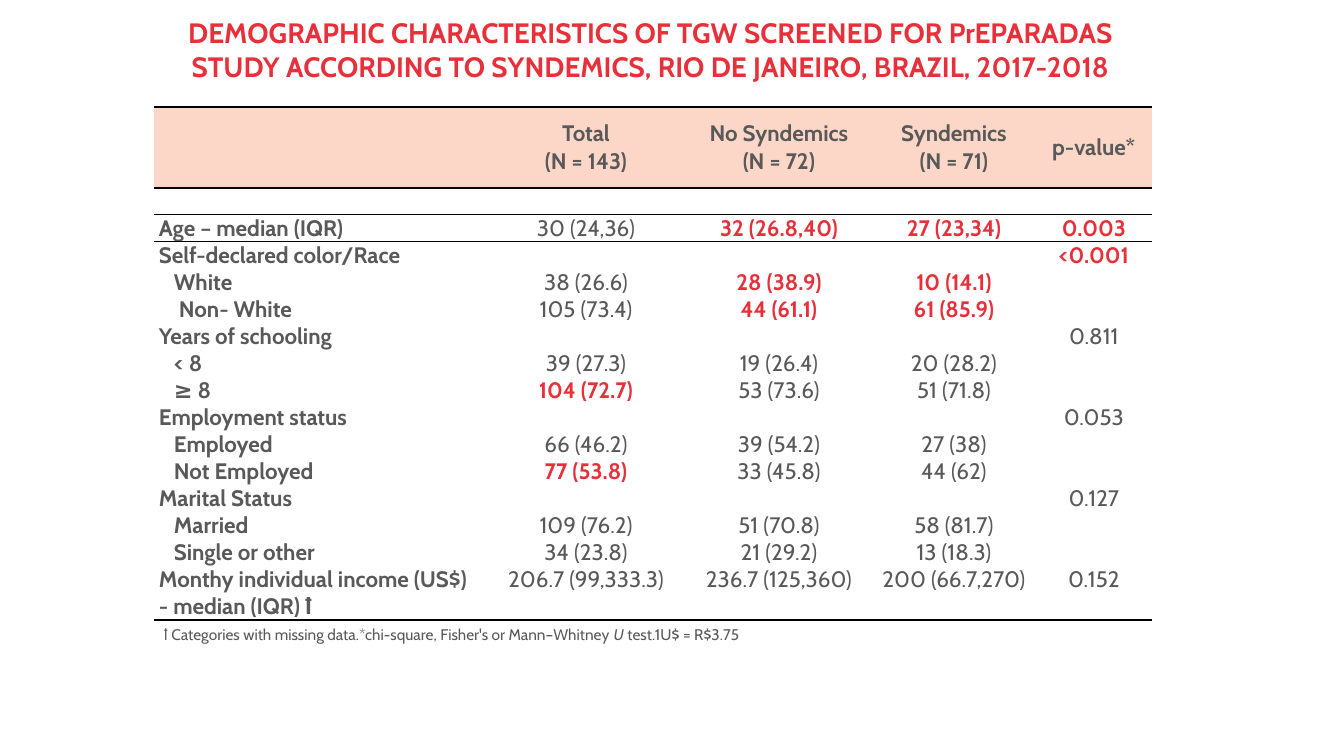
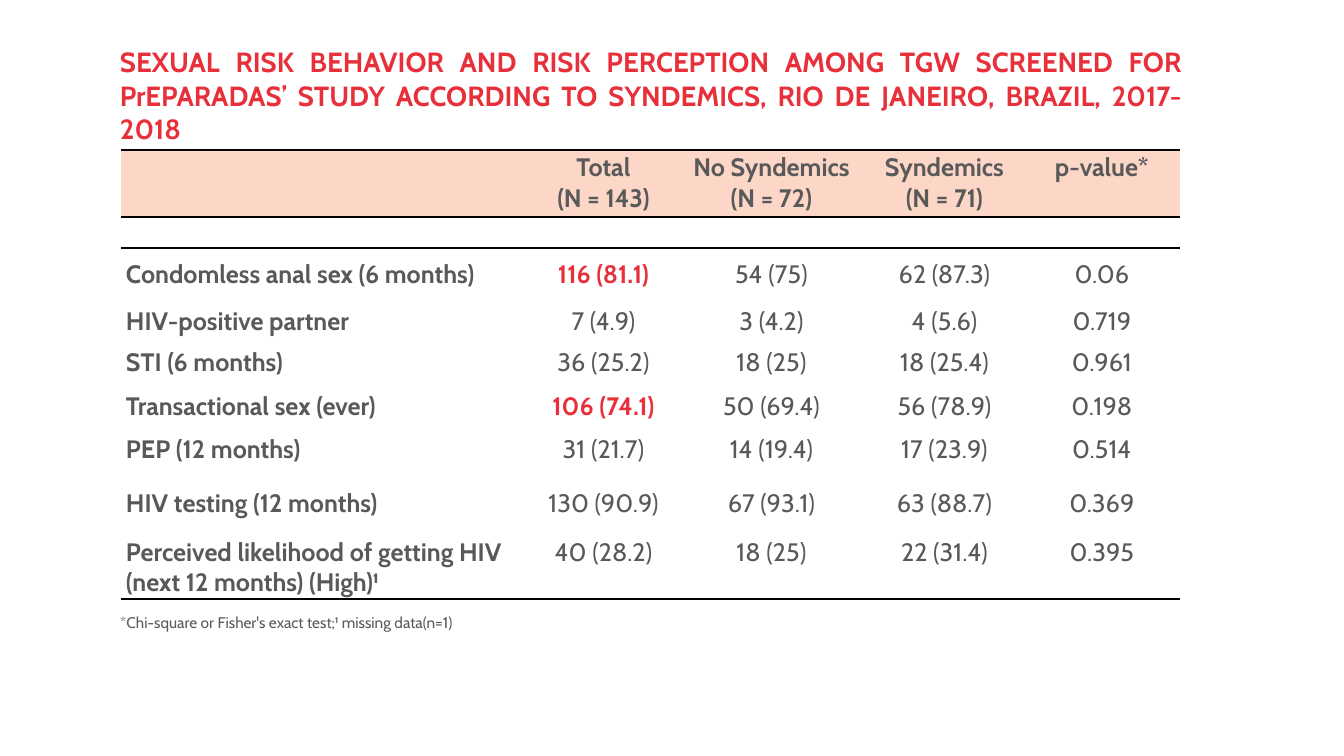
import lxml.etree
import pptx
import pptx.dml.color
import pptx.enum.text
import pptx.oxml.ns
import pptx.util

SCALE = 12192000 / 1344
FONT = "Cabin"
COLORS = {"red": "E8303B", "gray": "595959", "peach": "FCD7C8", "rule": "000000"}
ALIGN = pptx.enum.text.PP_ALIGN
ANCHOR = pptx.enum.text.MSO_ANCHOR
PLAIN_STYLE = "{2D5ABB26-0587-4C30-8999-92F81FD0307C}"
CELL_INSET = 5
NOTE_SIZE = 11

HEADER = ["", "Total\n(N = 143)", "No Syndemics\n(N = 72)", "Syndemics\n(N = 71)", "p-value*"]
SPACER = [""] * len(HEADER)

DEMOGRAPHICS = {
    "title": "DEMOGRAPHIC CHARACTERISTICS OF TGW SCREENED FOR PrEPARADAS STUDY "
             "ACCORDING TO SYNDEMICS, RIO DE JANEIRO, BRAZIL, 2017-2018",
    "title_at": (145, 11, 1011, 78),
    "title_style": (20, ALIGN.CENTER, ANCHOR.TOP),
    "table_at": (154, 107),
    "size": 16,
    "columns": [332, 200, 186, 164, 116],
    "heights": [81, 26] + [27] * 13 + [54],
    "header_anchor": ANCHOR.MIDDLE,
    "header_inset": 0,
    "middle_rows": 0,
    "rules": {0: 1, 1: 1, 2: 1, 16: 1.5},
    "rows": [
        ["Age – median (IQR)", "30 (24,36)", "32 (26.8,40)", "27 (23,34)", "0.003"],
        ["Self-declared color/Race", "", "", "", "<0.001"],
        ["White", "38 (26.6)", "28 (38.9)", "10 (14.1)", ""],
        ["Non- White", "105 (73.4)", "44 (61.1)", "61 (85.9)", ""],
        ["Years of schooling", "", "", "", "0.811"],
        ["< 8", "39 (27.3)", "19 (26.4)", "20 (28.2)", ""],
        ["≥ 8", "104 (72.7)", "53 (73.6)", "51 (71.8)", ""],
        ["Employment status", "", "", "", "0.053"],
        ["Employed", "66 (46.2)", "39 (54.2)", "27 (38)", ""],
        ["Not Employed", "77 (53.8)", "33 (45.8)", "44 (62)", ""],
        ["Marital Status", "", "", "", "0.127"],
        ["Married", "109 (76.2)", "51 (70.8)", "58 (81.7)", ""],
        ["Single or other", "34 (23.8)", "21 (29.2)", "13 (18.3)", ""],
        ["Monthy individual income (US$) - median (IQR) ꝉ", "206.7 (99,333.3)",
         "236.7 (125,360)", "200 (66.7,270)", "0.152"],
    ],
    "indents": {"White": 15, "Non- White": 20, "< 8": 15, "≥ 8": 15, "Employed": 15,
                "Not Employed": 15, "Married": 15, "Single or other": 15},
    "highlights": {"32 (26.8,40)", "27 (23,34)", "0.003", "<0.001", "28 (38.9)", "10 (14.1)",
                   "44 (61.1)", "61 (85.9)", "104 (72.7)", "77 (53.8)"},
    "note": [("ꝉ Categories with missing data.*chi-square, Fisher's or Mann–Whitney ", False),
             ("U", True), (" test.1U$ = R$3.75", False)],
    "note_at": (154, 620, 987, 29),
}

RISK_BEHAVIOR = {
    "title": "SEXUAL RISK BEHAVIOR AND RISK PERCEPTION AMONG TGW SCREENED FOR PrEPARADAS’ STUDY "
             "ACCORDING TO SYNDEMICS, RIO DE JANEIRO, BRAZIL, 2017-2018",
    "title_at": (110, 37, 1081, 116),
    "title_style": (19.8, ALIGN.JUSTIFY, ANCHOR.MIDDLE),
    "table_at": (121, 150),
    "size": 18,
    "columns": [408, 149, 187, 159, 156],
    "heights": [67, 31, 54, 39, 43, 45, 42, 66, 62],
    "header_anchor": ANCHOR.TOP,
    "header_inset": 2,
    "middle_rows": 8,
    "rules": {0: 1, 1: 1, 9: 1.5},
    "rows": [
        ["Condomless anal sex (6 months)", "116 (81.1)", "54 (75)", "62 (87.3)", "0.06"],
        ["HIV-positive partner", "7 (4.9)", "3 (4.2)", "4 (5.6)", "0.719"],
        ["STI (6 months)", "36 (25.2)", "18 (25)", "18 (25.4)", "0.961"],
        ["Transactional sex (ever)", "106 (74.1)", "50 (69.4)", "56 (78.9)", "0.198"],
        ["PEP (12 months)", "31 (21.7)", "14 (19.4)", "17 (23.9)", "0.514"],
        ["HIV testing (12 months)", "130 (90.9)", "67 (93.1)", "63 (88.7)", "0.369"],
        ["Perceived likelihood of getting HIV (next 12 months) (High)¹", "40 (28.2)", "18 (25)",
         "22 (31.4)", "0.395"],
    ],
    "indents": {},
    "highlights": {"116 (81.1)", "106 (74.1)"},
    "note": [("*Chi-square or Fisher's exact test;¹ missing data(n=1)", False)],
    "note_at": (110, 608, 435, 29),
}


def px(length):
    return pptx.util.Emu(round(length * SCALE))


def rgb(name):
    return pptx.dml.color.RGBColor.from_string(COLORS[name])


def add_span(para, text, size, color, bold=False, italic=False):
    span = para.add_run()
    span.text = text
    span.font.name = FONT
    span.font.size = pptx.util.Pt(size)
    span.font.bold = bold
    span.font.italic = italic
    span.font.color.rgb = rgb(color)


def add_box(page, place, spans, size, color, bold=False, align=ALIGN.LEFT, anchor=ANCHOR.TOP):
    frame = page.shapes.add_textbox(*map(px, place)).text_frame
    frame.word_wrap = True
    frame.vertical_anchor = anchor
    para = frame.paragraphs[0]
    para.alignment = align
    for text, italic in spans:
        add_span(para, text, size, color, bold, italic)


def add_rule(cell, side, position, width):
    properties = cell._tc.get_or_add_tcPr()
    line = lxml.etree.Element(pptx.oxml.ns.qn("a:" + side), w=str(pptx.util.Pt(width)))
    fill = lxml.etree.SubElement(line, pptx.oxml.ns.qn("a:solidFill"))
    lxml.etree.SubElement(fill, pptx.oxml.ns.qn("a:srgbClr"), val=COLORS["rule"])
    properties.insert(position, line)


def fill_cell(cell, text, row, column, content):
    is_header = row == 0
    highlighted = text in content["highlights"]
    cell.margin_left = px(CELL_INSET + content["indents"].get(text, 0))
    cell.margin_right = px(CELL_INSET)
    cell.margin_top = px(content["header_inset"] if is_header else 0)
    cell.margin_bottom = 0
    if is_header:
        cell.vertical_anchor = content["header_anchor"]
        cell.fill.solid()
        cell.fill.fore_color.rgb = rgb("peach")
    else:
        cell.vertical_anchor = ANCHOR.MIDDLE if row < content["middle_rows"] else ANCHOR.TOP
        cell.fill.background()
    for index, line in enumerate(text.split("\n")):
        para = cell.text_frame.paragraphs[0] if index == 0 else cell.text_frame.add_paragraph()
        para.alignment = ALIGN.CENTER if column else ALIGN.LEFT
        if line:
            add_span(para, line, content["size"], "red" if highlighted else "gray",
                     is_header or column == 0 or highlighted)
        else:
            lxml.etree.SubElement(para._p, pptx.oxml.ns.qn("a:endParaRPr"),
                                  sz=str(content["size"] * 100))
    borders = [(side, content["rules"][edge])
               for side, edge in (("lnT", row), ("lnB", row + 1)) if edge in content["rules"]]
    for position, (side, width) in enumerate(borders):
        add_rule(cell, side, position, width)


def add_data_table(page, content):
    rows = [HEADER, SPACER] + content["rows"]
    left, top = content["table_at"]
    place = (left, top, sum(content["columns"]), sum(content["heights"]))
    table = page.shapes.add_table(len(rows), len(HEADER), *map(px, place)).table
    table.first_row = False
    table.horz_banding = False
    table._tbl.tblPr.find(pptx.oxml.ns.qn("a:tableStyleId")).text = PLAIN_STYLE
    for column, width in zip(table.columns, content["columns"]):
        column.width = px(width)
    for row, (texts, height) in enumerate(zip(rows, content["heights"])):
        table.rows[row].height = px(height)
        for column, text in enumerate(texts):
            fill_cell(table.cell(row, column), text, row, column, content)


def main():
    deck = pptx.Presentation()
    deck.slide_width, deck.slide_height = px(1344), px(756)
    for content in (DEMOGRAPHICS, RISK_BEHAVIOR):
        page = deck.slides.add_slide(deck.slide_layouts[6])
        size, align, anchor = content["title_style"]
        add_box(page, content["title_at"], [(content["title"], False)], size, "red", True,
                align, anchor)
        add_data_table(page, content)
        add_box(page, content["note_at"], content["note"], NOTE_SIZE, "gray")
    deck.save("out.pptx")


if __name__ == "__main__":
    main()
